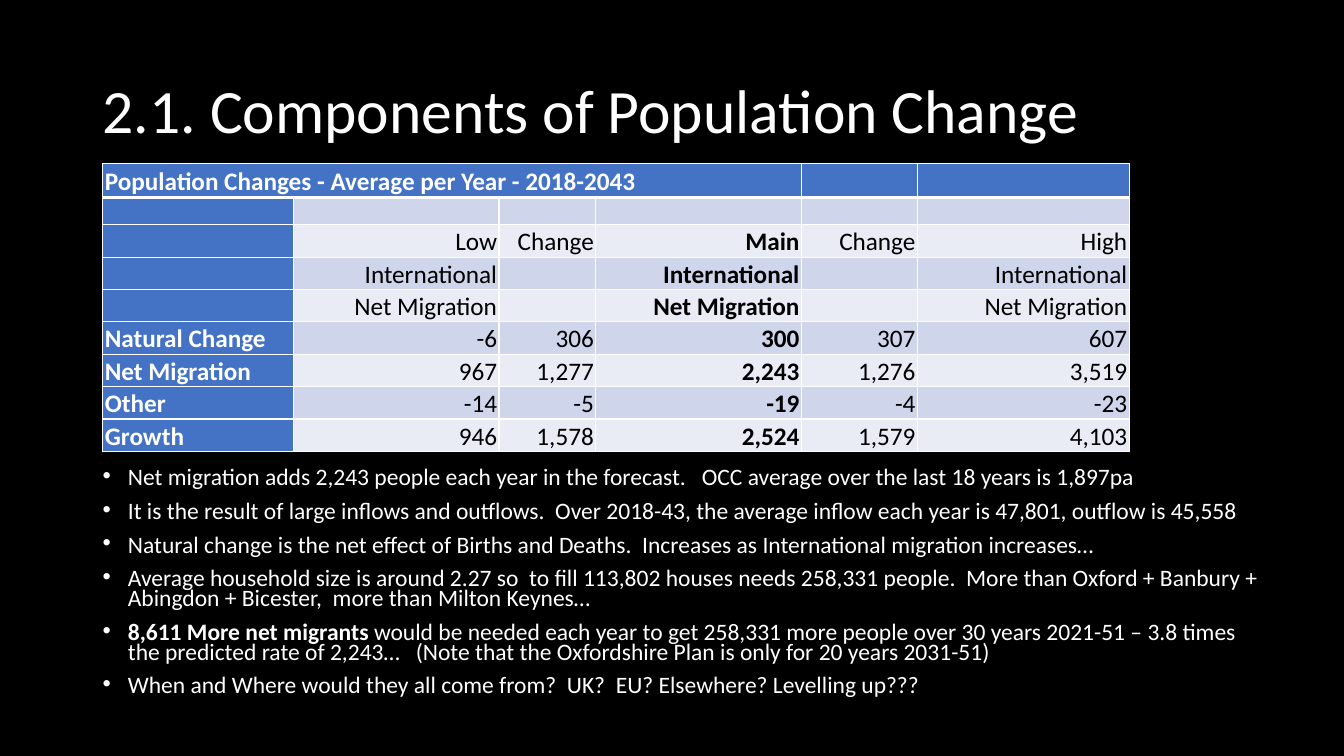
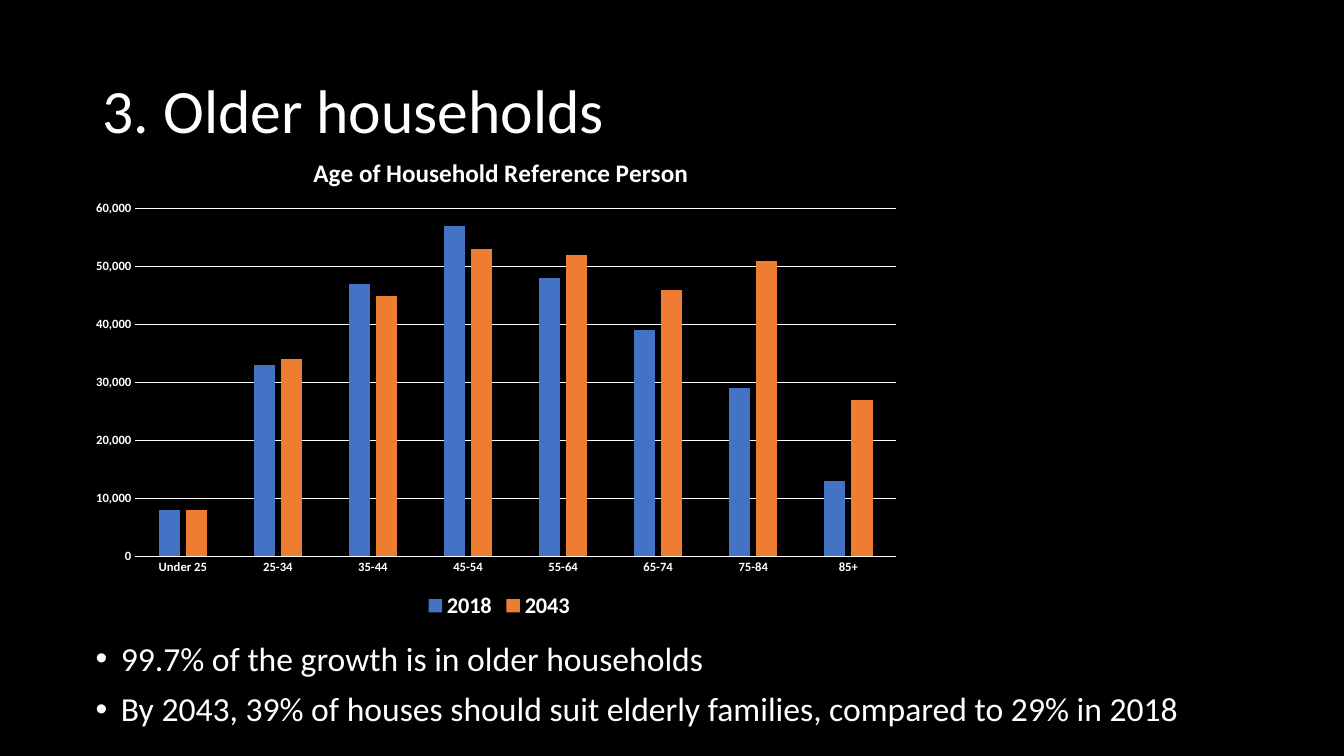
from lxml.etree import SubElement
from pptx import Presentation
from pptx.chart.data import CategoryChartData
from pptx.dml.color import RGBColor
from pptx.enum.chart import XL_CHART_TYPE, XL_LEGEND_POSITION, XL_TICK_MARK
from pptx.enum.text import MSO_ANCHOR, PP_ALIGN
from pptx.oxml.ns import qn
from pptx.util import Inches, Pt

INK = {
    name: RGBColor.from_string(code)
    for name, code in {
        "back": "000000",
        "white": "FFFFFF",
        "black": "000000",
        "blue": "4472C4",
        "orange": "ED7D31",
        "dark": "CFD5EA",
        "light": "E9EBF5",
    }.items()
}
FACE = "Calibri"


def style(font, size, ink="white", bold=False):
    font.name = FACE
    font.size = Pt(size)
    font.bold = bold
    font.color.rgb = INK[ink]


def write(slide, box, lines, size, lead, dots=True):
    frame = slide.shapes.add_textbox(*map(Inches, box)).text_frame
    frame.word_wrap = True
    frame.vertical_anchor = MSO_ANCHOR.TOP if dots else MSO_ANCHOR.MIDDLE
    for n, line in enumerate(lines):
        para = frame.add_paragraph() if n else frame.paragraphs[0]
        para.line_spacing = lead
        parts = line.split("|")
        for part in parts:
            run = para.add_run()
            run.text = part
            style(run.font, size, bold=len(parts) > 1 and part == parts[0])
        if dots:
            para.space_before = Pt(10)
            props = para._p.get_or_add_pPr()
            props.set("marL", str(Inches(0.25)))
            props.set("indent", str(Inches(-0.25)))
            SubElement(props, qn("a:buFont"), typeface="Arial")
            SubElement(props, qn("a:buChar"), char="•")


deck = Presentation()
deck.slide_width = Inches(13.33)
deck.slide_height = Inches(7.5)

pages = []
for title in ["2.1. Components of Population Change", "3. Older households"]:
    page = deck.slides.add_slide(deck.slide_layouts[6])
    page.background.fill.solid()
    page.background.fill.fore_color.rgb = INK["back"]
    write(page, (0.92, 0.4, 11.5, 1.45), [title], 44, 0.9, dots=False)
    pages.append(page)
change, older = pages

rows = [
    ["Population Changes - Average per Year - 2018-2043", "", "", "", "", ""],
    ["", "", "", "", "", ""],
    ["", "Low", "Change", "Main", "Change", "High"],
    ["", "International", "", "International", "", "International"],
    ["", "Net Migration", "", "Net Migration", "", "Net Migration"],
    ["Natural Change", "-6", "306", "300", "307", "607"],
    ["Net Migration", "967", "1,277", "2,243", "1,276", "3,519"],
    ["Other", "-14", "-5", "-19", "-4", "-23"],
    ["Growth", "946", "1,578", "2,524", "1,579", "4,103"],
]
wide = [1.89, 2.04, 0.96, 2.04, 1.15, 2.1]
high = [0.34, 0.27] + [0.32] * 7
grid = change.shapes.add_table(
    len(rows), len(wide), Inches(1.02), Inches(1.62), Inches(sum(wide)), Inches(sum(high))
).table
for col, width in zip(grid.columns, wide):
    col.width = Inches(width)
for row, height in zip(grid.rows, high):
    row.height = Inches(height)
grid.cell(0, 0).merge(grid.cell(0, 3))

for r, row in enumerate(rows):
    for c, word in enumerate(row):
        cell = grid.cell(r, c)
        head = r == 0 or c == 0
        props = cell._tc.get_or_add_tcPr()
        for side in "LRTB":
            thick = (r, side) in [(0, "B"), (1, "T")]
            edge = SubElement(props, qn("a:ln" + side), w=str(Pt(3 if thick else 1)))
            paint = SubElement(edge, qn("a:solidFill"))
            SubElement(paint, qn("a:srgbClr"), val=str(INK["white"]))
        cell.fill.solid()
        cell.fill.fore_color.rgb = INK["blue" if head else "dark" if r % 2 else "light"]
        cell.margin_left = cell.margin_right = Inches(0.02)
        cell.margin_top = cell.margin_bottom = 0
        cell.vertical_anchor = MSO_ANCHOR.BOTTOM
        para = cell.text_frame.paragraphs[0]
        if word:
            para.text = word
            para.line_spacing = 1.07
            para.alignment = PP_ALIGN.LEFT if head else PP_ALIGN.RIGHT
            style(para.runs[0].font, 18, "white" if head else "black", head or c == 3)
        else:
            SubElement(para._p, qn("a:endParaRPr"), sz="1000")

write(change, (0.92, 4.61, 11.68, 2.59), [
    "Net migration adds 2,243 people each year in the forecast.   "
    "OCC average over the last 18 years is 1,897pa",
    "It is the result of large inflows and outflows.  "
    "Over 2018-43, the average inflow each year is 47,801, outflow is 45,558",
    "Natural change is the net effect of Births and Deaths.  "
    "Increases as International migration increases…",
    "Average household size is around 2.27 so  to fill 113,802 houses needs 258,331 people.  "
    "More than Oxford + Banbury + Abingdon + Bicester,  more than Milton Keynes…",
    "8,611 More net migrants |would be needed each year to get 258,331 more people "
    "over 30 years 2021-51 – 3.8 times the predicted rate of 2,243…   "
    "(Note that the Oxfordshire Plan is only for 20 years 2031-51)",
    "When and Where would they all come from?  UK?  EU? Elsewhere? Levelling up???",
], 16.8, 0.7)

data = CategoryChartData(number_format="#,##0")
data.categories = ["Under 25", "25-34", "35-44", "45-54", "55-64", "65-74", "75-84", "85+"]
data.add_series("2018", [8000, 33000, 47000, 57000, 48000, 39000, 29000, 13000])
data.add_series("2043", [8000, 34000, 45000, 53000, 52000, 46000, 51000, 27000])
chart = older.shapes.add_chart(
    XL_CHART_TYPE.COLUMN_CLUSTERED, *map(Inches, (0.85, 1.4, 8.2, 4.79)), data
).chart
style(chart.font, 10)

chart.has_title = True
name = chart.chart_title.text_frame
name.text = "Age of Household Reference Person"
style(name.paragraphs[0].runs[0].font, 18, bold=True)

chart.has_legend = True
chart.legend.position = XL_LEGEND_POSITION.BOTTOM
chart.legend.include_in_layout = False
style(chart.legend.font, 16, bold=True)

plot = chart.plots[0]
plot.gap_width = 219
plot.overlap = -27
plot.vary_by_categories = False
for bars, ink in zip(plot.series, ["blue", "orange"]):
    bars.format.fill.solid()
    bars.format.fill.fore_color.rgb = INK[ink]

ages, count = chart.category_axis, chart.value_axis
for axis in (ages, count):
    axis.major_tick_mark = axis.minor_tick_mark = XL_TICK_MARK.NONE
    style(axis.tick_labels.font, 9, bold=True)
count.minimum_scale = 0
count.maximum_scale = 60000
count.major_unit = 10000
count.tick_labels.number_format = "#,##0"
count.tick_labels.number_format_is_linked = False
count.format.line.fill.background()
for line in (ages.format.line, count.major_gridlines.format.line):
    line.color.rgb = INK["white"]
    line.width = Pt(0.75)

for tag, spot, sizes in [
    ("c:title", 1, {"x": 0.27, "y": 0.02}),
    ("c:plotArea", 0, {"x": 0.06, "y": 0.14, "w": 0.92, "h": 0.72}),
]:
    node = chart.element.find(".//" + qn(tag))
    for old in node.findall(qn("c:layout")):
        node.remove(old)
    layout = SubElement(node, qn("c:layout"))
    node.insert(spot, layout)
    manual = SubElement(layout, qn("c:manualLayout"))
    if "w" in sizes:
        SubElement(manual, qn("c:layoutTarget"), val="inner")
    for mode in ("c:xMode", "c:yMode"):
        SubElement(manual, qn(mode), val="edge")
    for key, size in sizes.items():
        SubElement(manual, qn("c:" + key), val=str(size))

write(older, (0.85, 6.32, 11.5, 1.12), [
    "99.7% of the growth is in older households",
    "By 2043, 39% of houses should suit elderly families, compared to 29% in 2018",
], 24, 0.9)

deck.save("out.pptx")
